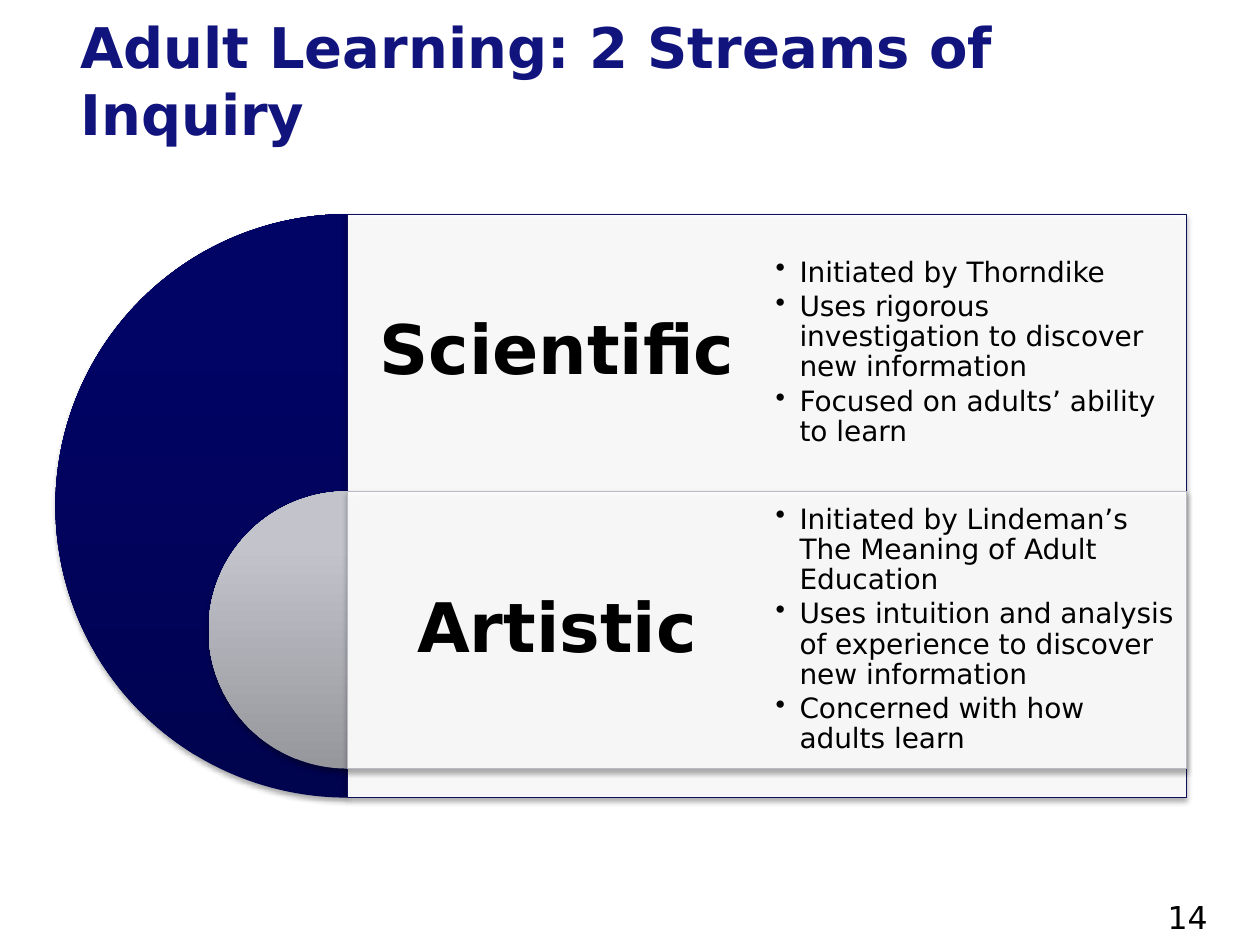
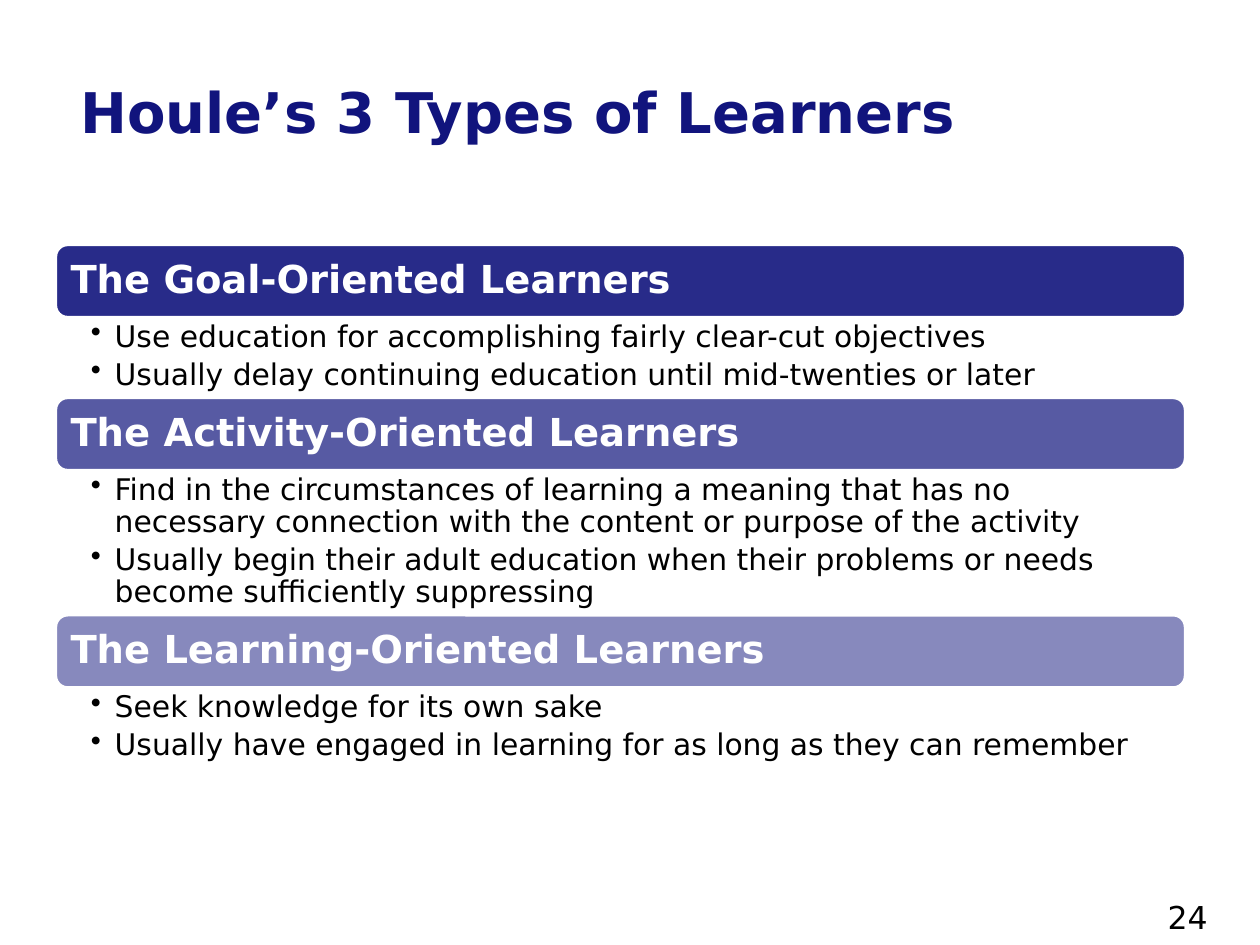
import pptx
import pptx.util
import pptx.dml.color
import pptx.enum.shapes
import pptx.enum.text
import pptx.oxml
import pptx.oxml.ns

Pt = pptx.util.Pt
RGBColor = pptx.dml.color.RGBColor
MSO_SHAPE = pptx.enum.shapes.MSO_SHAPE
MSO_ANCHOR = pptx.enum.text.MSO_ANCHOR
PP_ALIGN = pptx.enum.text.PP_ALIGN

# Shared look
FONT = "DejaVu Sans"
NAVY = RGBColor(0x11, 0x14, 0x7D)
DARK_EDGE = RGBColor(0x0D, 0x0F, 0x5C)
GREY_EDGE = RGBColor(0xBA, 0xBA, 0xC5)
BLACK = RGBColor(0, 0, 0)
WHITE = RGBColor(0xFF, 0xFF, 0xFF)
NAVY_FADE = [(0, RGBColor(0x00, 0x03, 0x4E)), (80, RGBColor(0x01, 0x03, 0x65)),
             (100, RGBColor(0x00, 0x03, 0x66))]
GREY_FADE = [(0, RGBColor(0x96, 0x96, 0x9D)), (80, RGBColor(0xC3, 0xC3, 0xCC)),
             (100, RGBColor(0xC3, 0xC3, 0xCD))]
LEFT = 31.7

# Content
STREAMS = {
    "title": "Adult Learning: 2 Streams of Inquiry", "title_top": 12.2, "number": "14",
    "parts": [
        ("Scientific", NAVY_FADE, DARK_EDGE,
         ["Initiated by Thorndike",
          "Uses rigorous investigation to discover new information",
          "Focused on adults’ ability to learn"]),
        ("Artistic", GREY_FADE, GREY_EDGE,
         ["Initiated by Lindeman’s The Meaning of Adult Education",
          "Uses intuition and analysis of experience to discover new information",
          "Concerned with how adults learn"]),
    ],
}
LEARNERS = {
    "title": "Houle’s 3 Types of Learners", "title_top": 30.2, "number": "24",
    # heading, band opacity, height of the bullet area, bullets
    "parts": [
        ("The Goal-Oriented Learners", 90, 45.6,
         ["Use education for accomplishing fairly clear-cut objectives",
          "Usually delay continuing education until mid-twenties or later"]),
        ("The Activity-Oriented Learners", 70, 82.4,
         ["Find in the circumstances of learning a meaning that has no necessary "
          "connection with the content or purpose of the activity",
          "Usually begin their adult education when their problems or needs "
          "become sufficiently suppressing"]),
        ("The Learning-Oriented Learners", 50, 45.6,
         ["Seek knowledge for its own sake",
          "Usually have engaged in learning for as long as they can remember"]),
    ],
}


def add_xml(parent, xml):
    ns = pptx.oxml.ns.nsdecls("a")
    el = pptx.oxml.parse_xml(xml.replace(">", f" {ns}>", 1))
    parent.append(el)
    return el


def style(p, size, color, bold=False):
    p.font.name, p.font.size, p.font.bold = FONT, Pt(size), bold
    p.font.color.rgb = color


def frame(sp, insets, anchor=MSO_ANCHOR.MIDDLE):
    tf = sp.text_frame
    tf.word_wrap = True
    tf.vertical_anchor = anchor
    tf.margin_left, tf.margin_top, tf.margin_right, tf.margin_bottom = map(Pt, insets)
    return tf


def add_box(s, x, y, w, h):
    return s.shapes.add_textbox(Pt(x), Pt(y), Pt(w), Pt(h))


def heading(sp, text, size, color, inset, align):
    tf = frame(sp, inset)
    tf.text = text
    p = tf.paragraphs[0]
    p.alignment, p.line_spacing = align, 0.9
    style(p, size, color, bold=True)


def bullets(sp, items, size, gap, insets, anchor):
    tf = frame(sp, insets, anchor)
    tf.text = "\n".join(items)
    for p in tf.paragraphs:
        p.level = 1
        p.line_spacing, p.space_after = 0.9, Pt(gap)
        pPr = p._p.get_or_add_pPr()
        pPr.set("marL", str(Pt(13.7)))
        pPr.set("indent", str(-Pt(13.7)))
        add_xml(pPr, '<a:buChar char="•"/>'.replace("/>", "></a:buChar>"))
        style(p, size, BLACK)


def add_shape(s, kind, x, y, w, h):
    sp = s.shapes.add_shape(kind, Pt(x), Pt(y), Pt(w), Pt(h))
    sp.shadow.inherit = False
    return sp


def fill_alpha(sp, color, percent):
    sp.fill.solid()
    sp.fill.fore_color.rgb = color
    clr = sp.fill._xPr.find(".//" + pptx.oxml.ns.qn("a:srgbClr"))
    add_xml(clr, f'<a:alpha val="{percent * 1000}"></a:alpha>')


def fill_fade(sp, stops):
    stop_xml = "".join(f'<a:gs pos="{pos * 1000}"><a:srgbClr val="{c}"/></a:gs>'
                       for pos, c in stops)
    grad = add_xml(sp._element.spPr, f'<a:gradFill rotWithShape="1"><a:gsLst>{stop_xml}</a:gsLst>'
                   '<a:lin ang="16200000" scaled="0"/></a:gradFill>')
    sp._element.spPr.find(pptx.oxml.ns.qn("a:prstGeom")).addnext(grad)


def soft_shadow(sp):
    effects = sp._element.spPr.find(pptx.oxml.ns.qn("a:effectLst"))
    add_xml(effects, f'<a:outerShdw blurRad="{Pt(3.1)}" dist="{Pt(1.8)}" dir="5400000" '
            'rotWithShape="0"><a:srgbClr val="000000"><a:alpha val="35000"/>'
            '</a:srgbClr></a:outerShdw>')


def add_slide(prs, content):
    s = prs.slides.add_slide(prs.slide_layouts[5])
    sp = s.shapes.title
    sp.left, sp.top, sp.width, sp.height = Pt(23.8), Pt(content["title_top"]), Pt(684), Pt(66.2)
    tf = frame(sp, (7.2, 3.6, 7.2, 3.6))
    tf.auto_size = pptx.enum.text.MSO_AUTO_SIZE.NONE
    tf.text = content["title"]
    p = tf.paragraphs[0]
    p.alignment = PP_ALIGN.LEFT
    p._p.get_or_add_pPr().set("marL", str(Pt(15)))
    style(p, 32, NAVY, bold=True)
    # Page number
    tf = add_box(s, 660.2, 509.8, 59.8, 19.4).text_frame
    tf.word_wrap = True
    tf.text = content["number"]
    style(tf.paragraphs[0], 18, BLACK)
    return s


def build_streams(prs):
    s = add_slide(prs, STREAMS)
    top, outer, row = 122.4, 333.4, 158.4
    card_left, card_w = LEFT + outer / 2, 479.6
    half = card_w / 2
    for i, (name, fade, edge, items) in enumerate(STREAMS["parts"]):
        y = top + i * row
        size = row if i else outer
        # Half disc centred on the card's left edge
        sp = add_shape(s, MSO_SHAPE.PIE, card_left - size / 2, y, size, size)
        sp.adjustments[0], sp.adjustments[1] = 54, 162
        fill_fade(sp, fade)
        sp.line.fill.background()
        soft_shadow(sp)
        # Card with name and bullets
        sp = add_shape(s, MSO_SHAPE.RECTANGLE, card_left, y, card_w, size)
        fill_alpha(sp, WHITE, 90)
        sp.line.color.rgb, sp.line.width = edge, Pt(0.75)
        soft_shadow(sp)
        heading(add_box(s, card_left, y, half, row), name, 39, BLACK,
                [11.5] * 4, PP_ALIGN.CENTER)
        bullets(add_box(s, card_left + half, y, half, row), items, 16, 2.4,
                [5] * 4, MSO_ANCHOR.MIDDLE)


def build_learners(prs):
    s = add_slide(prs, LEARNERS)
    y, width, band_h = 139.7, 645.8, 41.8
    for name, opacity, body_h, items in LEARNERS["parts"]:
        sp = add_shape(s, MSO_SHAPE.ROUNDED_RECTANGLE, LEFT, y, width, band_h)
        fill_alpha(sp, NAVY, opacity)
        sp.line.color.rgb, sp.line.width = WHITE, Pt(2)
        heading(sp, name, 22, WHITE, (6.6, 6.5, 6.6, 6.5), PP_ALIGN.LEFT)
        bullets(add_box(s, LEFT, y + band_h, width, body_h), items, 17, 3.4,
                (20.2, 2.2, 12.2, 2.2), MSO_ANCHOR.TOP)
        y += band_h + body_h


def main():
    prs = pptx.Presentation()
    prs.slide_width, prs.slide_height = Pt(720), Pt(540)
    build_streams(prs)
    build_learners(prs)
    prs.save("out.pptx")


if __name__ == "__main__":
    main()
